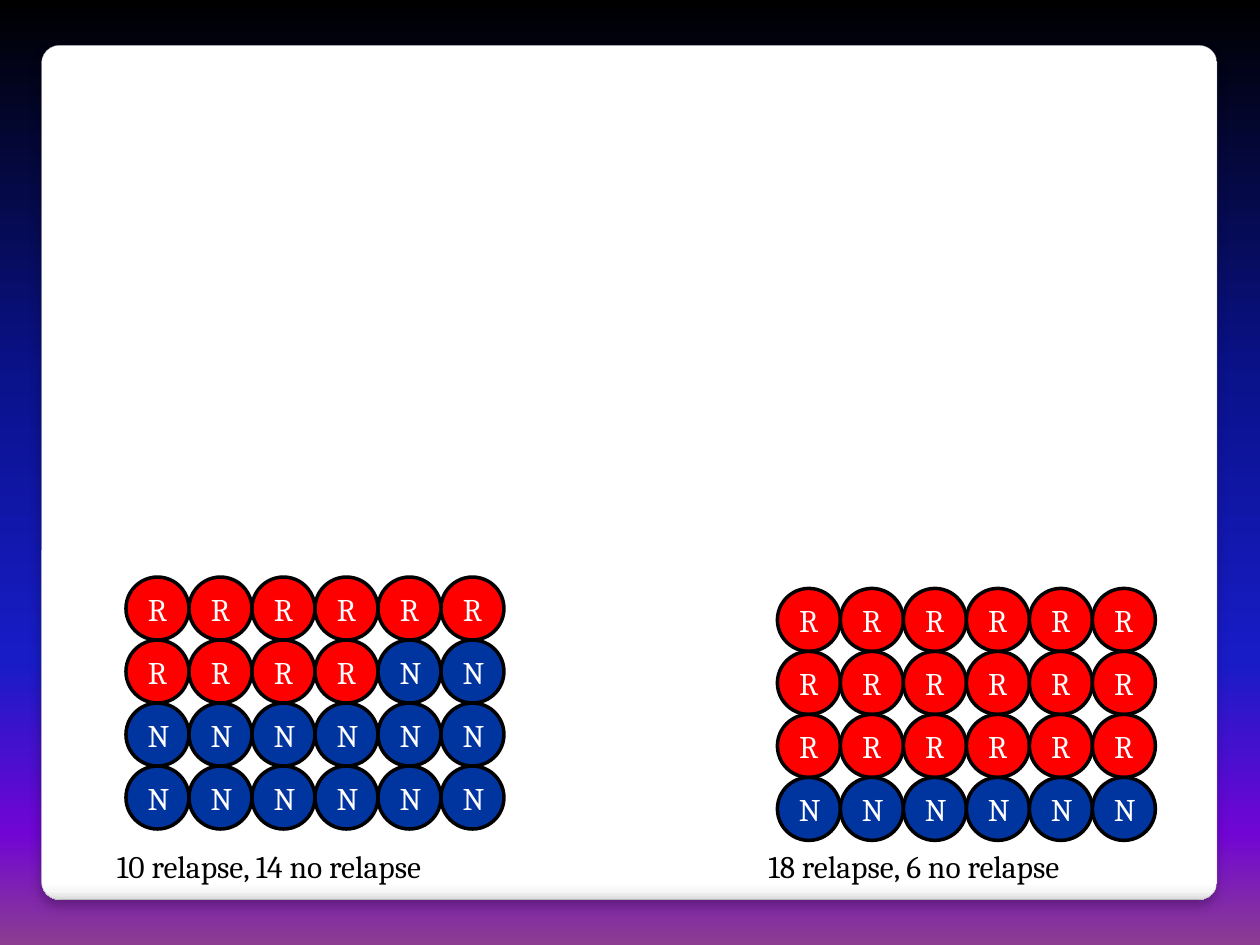
from dataclasses import dataclass

from lxml.etree import SubElement
from pptx import Presentation
from pptx.dml.color import RGBColor
from pptx.enum.shapes import MSO_SHAPE
from pptx.enum.text import MSO_ANCHOR, PP_ALIGN
from pptx.oxml.ns import qn
from pptx.util import Inches, Pt

COLORS = {
    "relapse": "FF0000",
    "no_relapse": "00349E",
    "outline": "000000",
    "letter": "FFFFFF",
    "caption": "000000",
    "panel_line": "A4A4A4",
    "shadow": "000000",
}
BACKGROUND_STOPS = [(0, "000000"), (40, "0A128C"), (70, "181CC7"),
                    (88, "7005D4"), (100, "8C3D91")]
PANEL_STOPS = [(0, "FFFFFF"), (98, "FFFFFF"), (99, "F7F7F7"), (100, "DADADA")]
FONT = "Cambria"
FONT_SIZE = Pt(18)
COLUMNS, ROWS = 6, 4
CELL = 0.5  # inches per grid cell


@dataclass
class Group:
    left: float
    top: float
    relapses: int
    caption_left: float

    @property
    def caption(self) -> str:
        return f"{self.relapses} relapse, {COLUMNS * ROWS - self.relapses} no relapse"


GROUPS = [Group(6.17, 4.67, 18, 6), Group(1, 4.58, 10, 0.83)]


def rgb(name: str) -> RGBColor:
    return RGBColor.from_string(COLORS[name])


def set_gradient(fill, element, stops: list) -> None:
    """Fill from top to bottom with stops of (percent, colour)."""
    fill.gradient()
    fill.gradient_angle = 270
    gs_list = next(element.iter(qn("a:gsLst")))
    for gs in list(gs_list):
        gs_list.remove(gs)
    for percent, color in stops:
        gs = SubElement(gs_list, qn("a:gs"), pos=str(percent * 1000))
        SubElement(gs, qn("a:srgbClr"), val=color)


def format_text(tf, color: str) -> None:
    font = tf.paragraphs[0].runs[0].font
    font.name, font.size, font.color.rgb = FONT, FONT_SIZE, rgb(color)


def add_panel(s) -> None:
    sp = s.shapes.add_shape(MSO_SHAPE.ROUNDED_RECTANGLE, Inches(0.33),
                            Inches(0.36), Inches(9.33), Inches(6.78))
    sp.adjustments[0] = 0.021
    set_gradient(sp.fill, sp._element, PANEL_STOPS)
    sp.line.color.rgb = rgb("panel_line")
    sp.line.width = Pt(0.16)
    # Soft shadow straight below the panel
    sp.shadow.inherit = False
    effects = sp._element.spPr.find(qn("a:effectLst"))
    shadow = SubElement(effects, qn("a:outerShdw"), blurRad=str(Pt(6)),
                        dist=str(Pt(4)), dir="5400000", rotWithShape="0")
    color = SubElement(shadow, qn("a:srgbClr"), val=COLORS["shadow"])
    SubElement(color, qn("a:alpha"), val="25000")


def add_patient(s, left: float, top: float, relapsed: bool) -> None:
    sp = s.shapes.add_shape(MSO_SHAPE.OVAL, Inches(left), Inches(top),
                            Inches(CELL), Inches(CELL))
    sp.shadow.inherit = False
    sp.fill.solid()
    sp.fill.fore_color.rgb = rgb("relapse" if relapsed else "no_relapse")
    sp.line.color.rgb = rgb("outline")
    sp.line.width = Pt(2)
    tf = sp.text_frame
    tf.text = "R" if relapsed else "N"
    tf.vertical_anchor = MSO_ANCHOR.MIDDLE
    tf.paragraphs[0].alignment = PP_ALIGN.CENTER
    format_text(tf, "letter")


def add_group(s, group: Group) -> None:
    for i in range(COLUMNS * ROWS):
        row, column = divmod(i, COLUMNS)
        add_patient(s, group.left + column * CELL, group.top + row * CELL,
                    i < group.relapses)


def add_caption(s, group: Group) -> None:
    tf = s.shapes.add_textbox(Inches(group.caption_left), Inches(6.67),
                              Inches(3.75), Inches(0.4)).text_frame
    tf.word_wrap = True
    tf.text = group.caption
    format_text(tf, "caption")


def main() -> None:
    prs = Presentation()
    prs.slide_width, prs.slide_height = Inches(10), Inches(7.5)
    s = prs.slides.add_slide(prs.slide_layouts[6])

    # Backdrop
    set_gradient(s.background.fill, s._element, BACKGROUND_STOPS)
    add_panel(s)

    # Patients of both groups, then the counts below them
    for group in GROUPS:
        add_group(s, group)
    for group in reversed(GROUPS):
        add_caption(s, group)

    prs.save("out.pptx")


if __name__ == "__main__":
    main()
